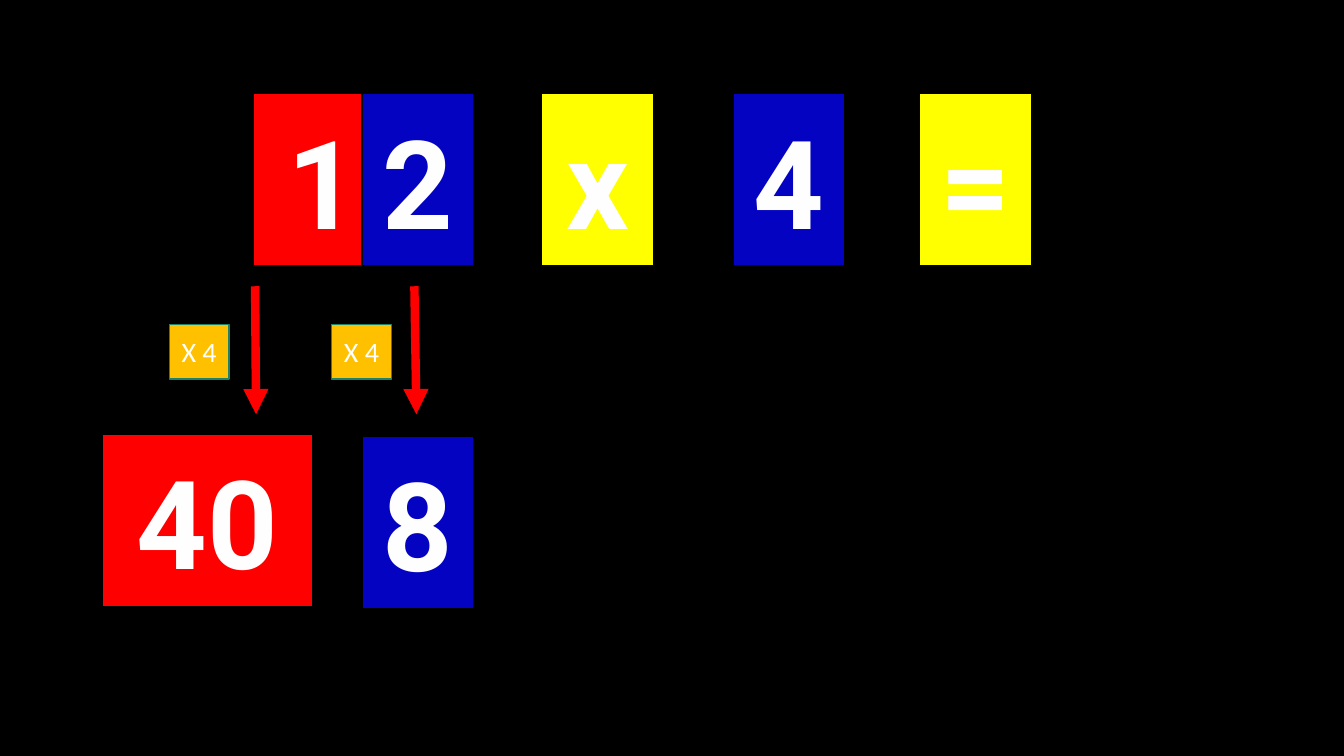
import pptx
import pptx.dml.color
import pptx.enum.shapes
import pptx.enum.text
import pptx.oxml
import pptx.oxml.ns
import pptx.util
from pptx.util import Inches

RGBColor = pptx.dml.color.RGBColor
BLACK = RGBColor(0x00, 0x00, 0x00)
RED = RGBColor(0xFF, 0x00, 0x00)
BLUE = RGBColor(0x03, 0x03, 0xC1)
YELLOW = RGBColor(0xFF, 0xFF, 0x00)
ORANGE = RGBColor(0xFF, 0xC0, 0x00)
GREEN = RGBColor(0x1E, 0x81, 0x68)
TEAL = RGBColor(0x29, 0xAF, 0x8C)
OFF_WHITE = RGBColor(0xFE, 0xFE, 0xFE)
WHITE = RGBColor(0xFF, 0xFF, 0xFF)

DIGIT_WIDTH, TENS_WIDTH, CARD_HEIGHT = 1.11, 2.09, 1.71
EQUATION_TOP = 0.93
ARROW_TOP, ARROW_BOTTOM = 2.84, 4.11


def add_box(slide, left, top, width, height, text, fill, border, font, size, color):
    box = slide.shapes.add_shape(
        pptx.enum.shapes.MSO_SHAPE.RECTANGLE,
        Inches(left), Inches(top), Inches(width), Inches(height))
    box.shadow.inherit = False
    box.fill.solid()
    box.fill.fore_color.rgb = fill
    box.line.color.rgb = border
    box.line.width = pptx.util.Pt(1)
    frame = box.text_frame
    frame.word_wrap = True
    frame.vertical_anchor = pptx.enum.text.MSO_ANCHOR.MIDDLE
    frame.text = text
    paragraph = frame.paragraphs[0]
    paragraph.alignment = pptx.enum.text.PP_ALIGN.CENTER
    run = paragraph.runs[0]
    run.font.name = font
    run.font.size = pptx.util.Pt(size)
    run.font.color.rgb = color
    return run


def add_card(slide, left, top, width, text, fill):
    run = add_box(slide, left, top, width, CARD_HEIGHT, text, fill, BLACK,
                  "Roboto", 88, OFF_WHITE)
    run.font.bold = True
    properties = run.font._element if hasattr(run.font, "_element") else run._r.get_or_add_rPr()
    properties.set("spc", "50")
    outline = pptx.oxml.parse_xml(
        f'<a:ln {pptx.oxml.ns.nsdecls("a")} w="9525"><a:solidFill>'
        f'<a:srgbClr val="{TEAL}"/></a:solidFill></a:ln>')
    properties.insert(0, outline)


def add_multiplier(slide, left):
    add_box(slide, left, 3.22, 0.59, 0.54, "X 4", ORANGE, GREEN, "Calibri", 20, WHITE)


def add_arrow(slide, start, end):
    arrow = slide.shapes.add_connector(
        pptx.enum.shapes.MSO_CONNECTOR.STRAIGHT,
        Inches(start), Inches(ARROW_TOP), Inches(end), Inches(ARROW_BOTTOM))
    arrow.line.color.rgb = RED
    arrow.line.width = pptx.util.Pt(6)
    line = arrow.line._get_or_add_ln()
    pptx.oxml.ns.qn("a:tailEnd")
    line.append(pptx.oxml.parse_xml(
        f'<a:tailEnd {pptx.oxml.ns.nsdecls("a")} type="triangle"/>'))
    arrow._element.spPr.append(pptx.oxml.parse_xml(
        f'<a:effectLst {pptx.oxml.ns.nsdecls("a")}/>'))


def main():
    presentation = pptx.Presentation()
    presentation.slide_width = Inches(13.33)
    presentation.slide_height = Inches(7.5)
    slide = presentation.slides.add_slide(presentation.slide_layouts[6])
    slide.background.fill.solid()
    slide.background.fill.fore_color.rgb = BLACK

    add_card(slide, 2.51, EQUATION_TOP, TENS_WIDTH, "10", RED)
    for left, symbol, fill in ((3.59, "2", BLUE), (5.37, "x", YELLOW),
                               (7.27, "4", BLUE), (9.12, "=", YELLOW)):
        add_card(slide, left, EQUATION_TOP, DIGIT_WIDTH, symbol, fill)

    for start, end in ((2.53, 2.54), (4.11, 4.13)):
        add_arrow(slide, start, end)

    add_card(slide, 1.01, 4.31, TENS_WIDTH, "40", RED)
    add_card(slide, 3.59, 4.33, DIGIT_WIDTH, "8", BLUE)

    for left in (1.68, 3.29):
        add_multiplier(slide, left)

    presentation.save("out.pptx")


if __name__ == "__main__":
    main()
